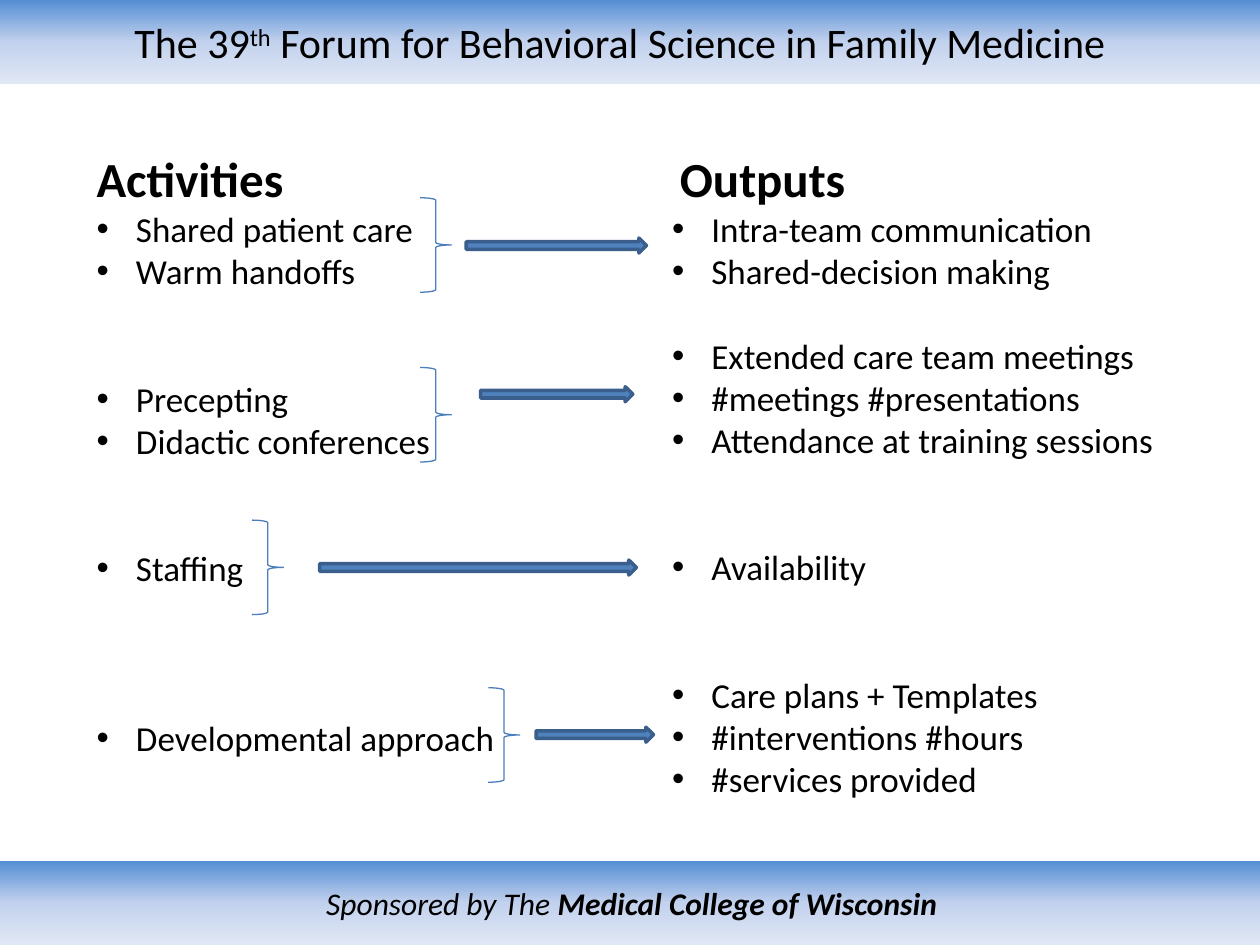
"""Builds the activities and outputs slide of a forum presentation."""
from copy import deepcopy

from pptx import Presentation
from pptx.dml.color import RGBColor
from pptx.enum import shapes, text
from pptx.oxml import ns, xmlchemy
from pptx.util import Pt

BLACK = RGBColor(0x00, 0x00, 0x00)
BRACE = RGBColor(0x4B, 0x7E, 0xBC)
ARROW = RGBColor(0x4F, 0x81, 0xBD)
ARROW_EDGE = RGBColor(0x3A, 0x5F, 0x8C)
BAND_STOPS = (
    (0, RGBColor(0x55, 0x8E, 0xD5)),
    (0.5, RGBColor(0xC2, 0xD1, 0xED)),
    (1, RGBColor(0xE1, 0xE8, 0xF5)),
)
LINE_PITCH = 24.4

ACTIVITIES = (
    ("Shared patient care", 0), ("Warm handoffs", 0),
    ("Precepting", 2), ("Didactic conferences", 0),
    ("Staffing", 2), ("Developmental approach", 3),
)
OUTPUTS = (
    ("Intra-team communication", 0), ("Shared-decision making", 0),
    ("Extended care team meetings", 1), ("#meetings #presentations", 0),
    ("Attendance at training sessions", 0), ("Availability", 2),
    ("Care plans + Templates", 2), ("#interventions #hours", 0),
    ("#services provided", 0),
)
BRACES = ((240, 113), (240, 210), (144, 297.2), (279, 393))
ARROWS = ((266.4, 136, 103), (274.6, 221, 87),
          (182.6, 320, 181), (306.4, 415.5, 67))


class SlideBuilder:
    """Holds the style and the current slide."""

    font = "Calibri"

    def __init__(self, s):
        self.s = s

    def place(self, sp, left, top, width, height):
        sp.left, sp.top, sp.width, sp.height = map(Pt, (left, top, width, height))

    def style(self, r, size, bold=False, italic=False):
        r.font.name, r.font.size = self.font, Pt(size)
        r.font.bold, r.font.italic = bold, italic
        r.font.color.rgb = BLACK

    def shape(self, kind, left, top, width, height):
        sp = self.s.shapes.add_shape(kind, *map(Pt, (left, top, width, height)))
        sp.shadow.inherit = False
        return sp

    def band(self, sp, runs, size, italic=False):
        sp.fill.gradient()
        sp.fill.gradient_angle = 270
        stops = next(sp._element.iter(ns.qn("a:gsLst")))
        stops.insert(1, deepcopy(stops[0]))
        for stop, (position, color) in zip(sp.fill.gradient_stops, BAND_STOPS):
            stop.position, stop.color.rgb = position, color
        sp.line.fill.background()
        tf = sp.text_frame
        tf.auto_size = text.MSO_AUTO_SIZE.NONE
        tf.vertical_anchor = text.MSO_ANCHOR.MIDDLE
        p = tf.paragraphs[0]
        p.alignment = text.PP_ALIGN.CENTER
        for words, bold, baseline in runs:
            r = p.add_run()
            r.text = words
            self.style(r, size, bold, italic)
            if baseline:
                r._r.get_or_add_rPr().set("baseline", str(baseline))
        return tf

    def column(self, sp, left, heading, heading_indent, items):
        self.place(sp, left, 81.4, 328, 404.6)
        tf = sp.text_frame
        tf.auto_size = text.MSO_AUTO_SIZE.NONE
        tf.text = "\n".join([heading] + [item for item, _ in items])
        gaps = [0] + [gap for _, gap in items]
        for i, (p, gap) in enumerate(zip(tf.paragraphs, gaps)):
            margin, indent = (22.5, -22.5) if i else (heading_indent, 0)
            pPr = p._p.get_or_add_pPr()
            pPr.set("marL", str(Pt(margin)))
            pPr.set("indent", str(Pt(indent)))
            bullet = xmlchemy.OxmlElement("a:buChar" if i else "a:buNone")
            if i:
                bullet.set("char", "•")
            pPr.append(bullet)
            p.space_before = Pt(gap * LINE_PITCH)
            self.style(p.runs[0], 20 if i else 28, bold=not i)

    def brace(self, left, top):
        sp = self.shape(shapes.MSO_SHAPE.RIGHT_BRACE, left, top, 18, 54)
        sp.fill.background()
        sp.line.color.rgb, sp.line.width = BRACE, Pt(0.75)

    def arrow(self, left, top, width):
        sp = self.shape(shapes.MSO_SHAPE.RIGHT_ARROW, left, top, width, 8.6)
        sp.fill.solid()
        sp.fill.fore_color.rgb = ARROW
        sp.line.color.rgb, sp.line.width = ARROW_EDGE, Pt(2)


def main():
    prs = Presentation()
    prs.slide_width, prs.slide_height = Pt(720), Pt(540)
    s = prs.slides.add_slide(prs.slide_layouts[3])
    builder = SlideBuilder(s)
    title, activities, outputs = list(s.placeholders)[:3]

    builder.place(title, 0, 0, 720, 48)
    tf = builder.band(title, (
        ("The 39", False, 0), ("th", False, 30000),
        (" Forum for Behavioral Science in Family Medicine", False, 0)), 24)
    tf.margin_right = Pt(18.6)
    footer = builder.shape(shapes.MSO_SHAPE.RECTANGLE, 0, 492, 722, 48)
    builder.band(footer, (
        ("Sponsored by The ", False, 0),
        ("Medical College of Wisconsin", True, 0)), 18, italic=True)

    builder.column(activities, 48, "Activities", 0, ACTIVITIES)
    builder.column(outputs, 376.8, "Outputs", 4.5, OUTPUTS)
    for brace in BRACES:
        builder.brace(*brace)
    for arrow in ARROWS:
        builder.arrow(*arrow)
    prs.save("out.pptx")


if __name__ == "__main__":
    main()
